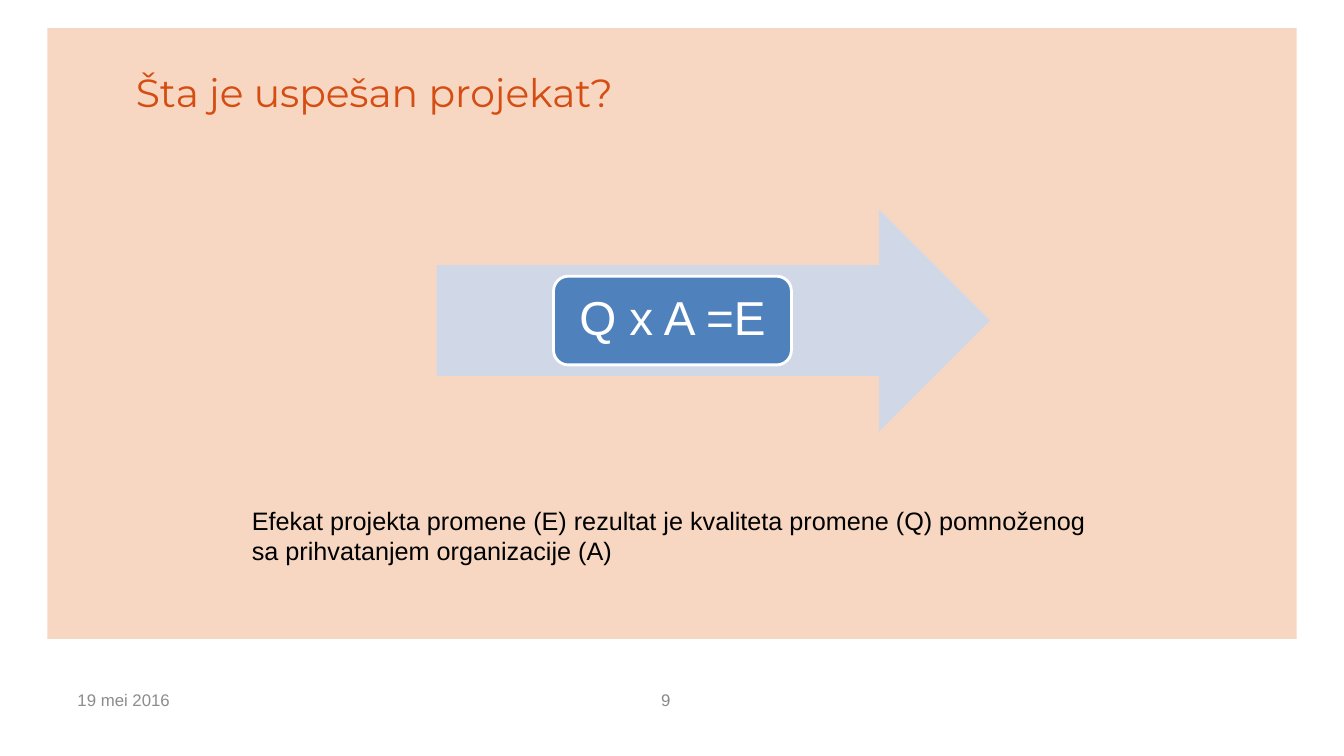
"""Builds the slide on what makes a project successful."""
from dataclasses import dataclass

from pptx import Presentation
from pptx.dml.color import RGBColor
from pptx.enum.shapes import MSO_SHAPE
from pptx.enum.text import MSO_ANCHOR, PP_ALIGN
from pptx.util import Inches, Pt

RECTANGLE = MSO_SHAPE.RECTANGLE
ARROW = MSO_SHAPE.RIGHT_ARROW
ROUNDED = MSO_SHAPE.ROUNDED_RECTANGLE
TOP, MIDDLE = MSO_ANCHOR.TOP, MSO_ANCHOR.MIDDLE
LEFT, CENTER = PP_ALIGN.LEFT, PP_ALIGN.CENTER


@dataclass(frozen=True)
class Theme:
    panel: str = "F7D7C1"
    arrow: str = "D0D8E8"
    formula_fill: str = "4F81BD"
    white: str = "FFFFFF"
    title: str = "D54D13"
    body: str = "000000"
    page: str = "898989"
    date: str = "8C8C8C"
    heading_font: str = "Montserrat"
    body_font: str = "Arial"
    title_size: int = 28
    formula_size: int = 34
    body_size: int = 18
    footer_size: int = 12


THEME = Theme()

PANEL_BOX = (0.47, 0.28, 12.39, 6.06)
ARROW_BOX = (4.33, 2.08, 5.49, 2.2)
FORMULA = ("Q x A =E", (5.49, 2.74, 2.36, 0.88))

TEXTS = [
    ("Šta je uspešan projekat?", (1.25, 0.44, 11.16, 0.95),
     dict(size=THEME.title_size, color=THEME.title, font=THEME.heading_font)),
    ("Efekat projekta promene (E) rezultat je kvaliteta promene (Q) "
     "pomnoženog sa prihvatanjem organizacije (A)", (2.4, 4.96, 8.53, 0.71),
     dict(size=THEME.body_size, color=THEME.body, anchor=TOP)),
    ("19 mei 2016", (0.67, 6.74, 3.11, 0.4),
     dict(size=THEME.footer_size, color=THEME.date)),
    ("9", (6.46, 6.74, 1.16, 0.4),
     dict(size=THEME.footer_size, color=THEME.page)),
]


def lengths(box):
    return [Inches(value) for value in box]


def add_block(slide, preset, box, fill, outline=None):
    block = slide.shapes.add_shape(preset, *lengths(box))
    block.shadow.inherit = False
    block.fill.solid()
    block.fill.fore_color.rgb = RGBColor.from_string(fill)
    if outline:
        block.line.color.rgb = RGBColor.from_string(outline)
        block.line.width = Pt(2)
    else:
        block.line.fill.background()
    return block


def write(holder, text, *, size, color, font=THEME.body_font, align=LEFT,
          anchor=MIDDLE, line_spacing=1.0):
    frame = holder.text_frame
    frame.word_wrap = True
    frame.vertical_anchor = anchor
    paragraph = frame.paragraphs[0]
    paragraph.alignment = align
    paragraph.line_spacing = line_spacing
    run = paragraph.add_run()
    run.text = text
    run.font.name = font
    run.font.size = Pt(size)
    run.font.color.rgb = RGBColor.from_string(color)


def main():
    deck = Presentation()
    deck.slide_width, deck.slide_height = Inches(13.33), Inches(7.5)
    slide = deck.slides.add_slide(deck.slide_layouts[6])

    add_block(slide, RECTANGLE, PANEL_BOX, THEME.panel)
    add_block(slide, ARROW, ARROW_BOX, THEME.arrow)
    formula_text, formula_box = FORMULA
    formula = add_block(slide, ROUNDED, formula_box, THEME.formula_fill, THEME.white)
    write(formula, formula_text, size=THEME.formula_size, color=THEME.white,
          align=CENTER, line_spacing=0.9)

    for text, box, style in TEXTS:
        write(slide.shapes.add_textbox(*lengths(box)), text, **style)

    deck.save("out.pptx")


if __name__ == "__main__":
    main()
